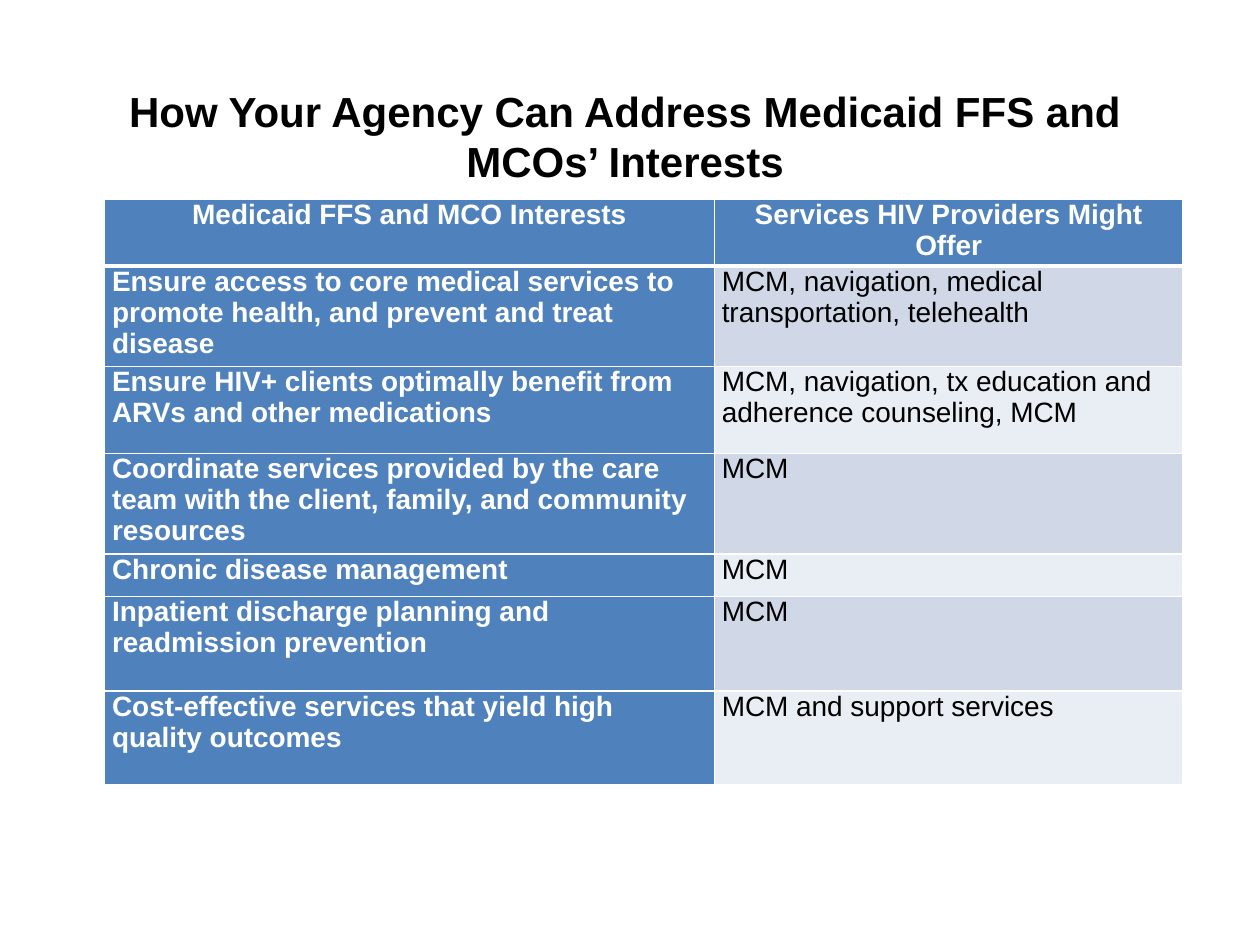
from lxml.etree import SubElement
from pptx import Presentation
from pptx.dml.color import RGBColor
from pptx.enum.text import MSO_ANCHOR as Anchor, PP_ALIGN as Align
from pptx.oxml.ns import qn
from pptx.util import Cm, Pt

TITLE = "How Your Agency Can Address Medicaid FFS and MCOs’ Interests"
HEADS = ("Medicaid FFS and MCO Interests", "Services HIV Providers Might Offer")
ROWS = [
    ("Ensure access to core medical services to promote health, and prevent and treat disease",
     "MCM, navigation, medical transportation, telehealth"),
    ("Ensure HIV+ clients optimally benefit from ARVs and other medications",
     "MCM, navigation, tx education and adherence counseling, MCM"),
    ("Coordinate services provided by the care team with the client, family, and community resources",
     "MCM"),
    ("Chronic disease management", "MCM"),
    ("Inpatient discharge planning and readmission prevention", "MCM"),
    ("Cost-effective services that yield high quality outcomes", "MCM and support services"),
]
WIDTHS = (12.29, 9.45)
HEIGHTS = (1.35, 2.03, 1.75, 2.03, 0.86, 1.9, 1.9)
BLUE, WHITE, BLACK = "4F81BD", "FFFFFF", "000000"
BANDS = ("E9EDF4", "D0D8E8")


def paint(fill, color):
    fill.solid()
    fill.fore_color.rgb = RGBColor.from_string(color)


def style(para, size, color, bold, align):
    para.alignment = align
    for run in para.runs:
        font = run.font
        font.name, font.size, font.bold = "Arial", Pt(size), bold
        paint(font.fill, color)


def edge(cell, sides):
    props = cell._tc.get_or_add_tcPr()
    for spot, (side, width) in enumerate(sides.items()):
        line = SubElement(props, qn("a:ln" + side), w=str(Pt(width)))
        fill = SubElement(line, qn("a:solidFill"))
        SubElement(fill, qn("a:srgbClr"), val=WHITE)
        props.insert(spot, line)


def fill_cell(cell, text, row, col):
    head = row == 0
    dark = head or col == 0
    cell.margin_left = cell.margin_right = Cm(0.15)
    cell.margin_top = cell.margin_bottom = 0
    cell.vertical_anchor = Anchor.TOP
    cell.text_frame.text = text
    para = cell.text_frame.paragraphs[0]
    style(para, 16, WHITE if dark else BLACK, dark, Align.CENTER if head else Align.LEFT)
    para.space_after = Pt(0 if head else 2)
    paint(cell.fill, BLUE if dark else BANDS[row % 2])
    edge(cell, {"L": 1, "R": 1, "T": 3 if row == 1 else 1, "B": 3 if head else 1})


def main():
    deck = Presentation()
    deck.slide_width, deck.slide_height = Cm(25.4), Cm(19.05)
    slide = deck.slides.add_slide(deck.slide_layouts[5])

    title = slide.shapes.title
    title.left, title.top, title.width, title.height = Cm(1.27), Cm(1.47), Cm(22.66), Cm(2.54)
    title.text_frame.text = TITLE
    title.text_frame.vertical_anchor = Anchor.MIDDLE
    style(title.text_frame.paragraphs[0], 24, BLACK, True, Align.CENTER)

    data = [HEADS] + ROWS
    table = slide.shapes.add_table(
        len(data), len(HEADS), Cm(2.11), Cm(4.01), Cm(sum(WIDTHS)), Cm(sum(HEIGHTS))
    ).table
    for col, width in zip(table.columns, WIDTHS):
        col.width = Cm(width)
    for row, height in zip(table.rows, HEIGHTS):
        row.height = Cm(height)
    for r, texts in enumerate(data):
        for c, text in enumerate(texts):
            fill_cell(table.cell(r, c), text, r, c)

    deck.save("out.pptx")


if __name__ == "__main__":
    main()
